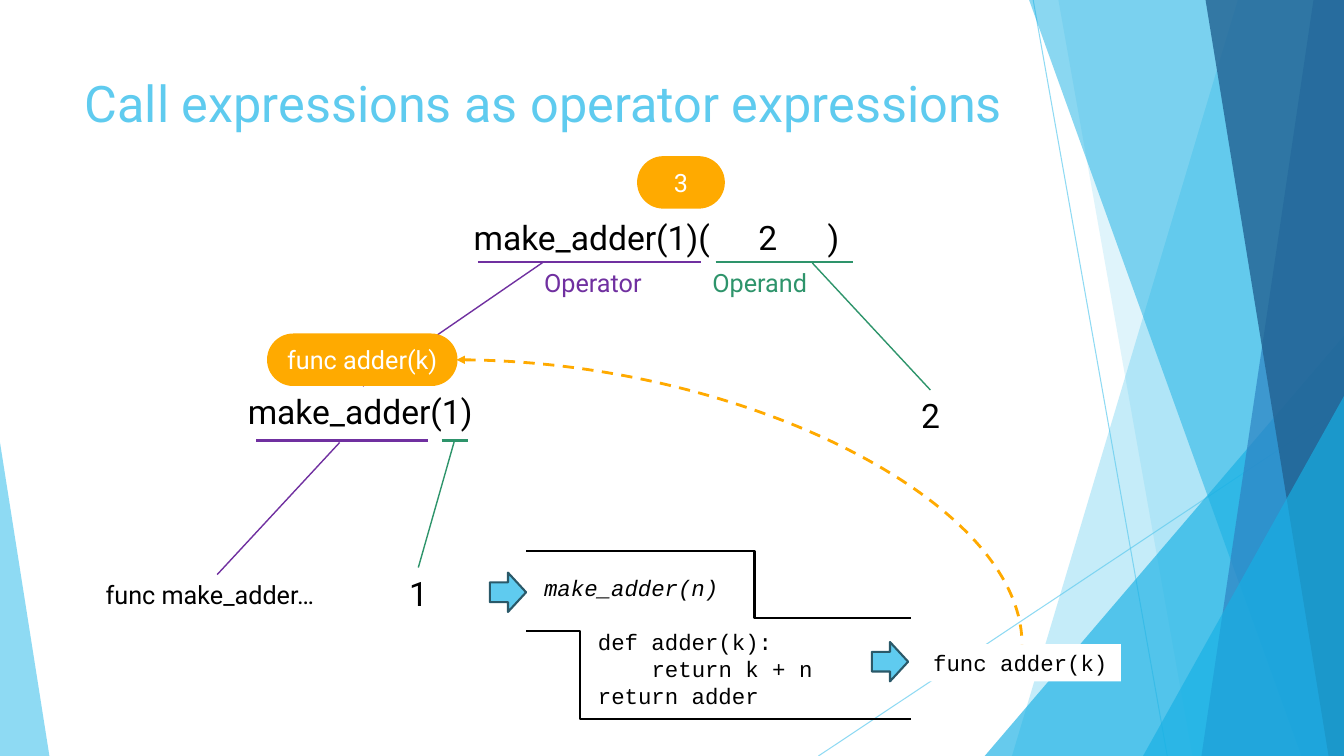
from dataclasses import dataclass

from lxml.etree import SubElement
from pptx import Presentation
from pptx.dml.color import RGBColor
from pptx.enum.dml import MSO_LINE
from pptx.enum.shapes import MSO_CONNECTOR, MSO_SHAPE
from pptx.enum.text import MSO_ANCHOR, PP_ALIGN
from pptx.oxml.ns import qn
from pptx.util import Pt

WIDTH, HEIGHT = 960, 540
SKY, AZURE, BLUE, NAVY = "5FCBEF", "17B0E4", "2E83C3", "226292"
PURPLE, GREEN, ORANGE = "7030A0", "2E946B", "FFAA00"
BLACK, WHITE, ARROW_EDGE = "000000", "FFFFFF", "2A5969"
SANS, MONO = "Roboto", "Courier New"
TOP, RIGHT = 0, 3
CHARACTER = 9.6


@dataclass
class Facet:
    """A band reaching the right slide edge, with a slanted left side."""
    top: float
    bottom: float
    color: str
    opacity: int


@dataclass
class Corner:
    """A right triangle standing on the bottom slide edge."""
    left: float
    top: float
    width: float
    apex: float
    color: str
    opacity: int


@dataclass
class Label:
    text: str
    left: float
    top: float
    width: float
    height: float
    size: float = 24
    color: str = BLACK
    font: str = SANS


@dataclass
class Underline:
    left: float
    right: float
    top: float
    color: str


@dataclass
class Branch:
    left: float
    top: float
    target: str
    color: str


@dataclass
class Step:
    """A frame line around the function body, bending at a share of its width."""
    top: float
    bottom: float
    bend: float


BACKDROP = [
    Facet(884.2, 722.9, SKY, 36),
    Facet(756, 851.8, SKY, 20),
    Corner(703.4, 239.8, 256.6, 1, AZURE, 66),
    Facet(735.1, 929.5, AZURE, 50),
    Facet(938.2, 858.2, BLUE, 70),
    Facet(861.1, 949, NAVY, 80),
    Corner(816.5, 283, 143.5, 1, AZURE, 66),
    Corner(0, 316.1, 35.3, 0, SKY, 70),
]
LABELS = {
    "expression": Label("make_adder(1)(\t2\t)", 331.2, 151.2, 297.4, 36),
    "operator": Label("Operator", 381.6, 187.2, 87.8, 28.8, 18, PURPLE),
    "operand": Label("Operand", 501.8, 187.2, 83.5, 28.8, 18, GREEN),
    "inner call": Label("make_adder(1)", 169.9, 275.8, 178.6, 36),
    "function": Label("func make_adder…", 68.4, 410.4, 173.5, 28.8, 18),
    "body": Label("make_adder(n)\ndef adder(k):\nreturn k + n\nreturn adder",
                  381.6, 406.8, 208.8, 106.6, 16, BLACK, MONO),
    "result": Label("func adder(k)", 659.5, 460.1, 141.1, 26.6, 16, BLACK, MONO),
    "two": Label("2", 650.9, 278.6, 27.4, 36),
    "one": Label("1", 285.1, 405.4, 27.4, 36),
}
EXPRESSION_TABS = [203.5, 253]
BODY_INDENTS = [0, 4, 8, 4]
UNDERLINES = [
    Underline(341.3, 500.4, 187.2, PURPLE),
    Underline(511.2, 609.1, 187.2, GREEN),
    Underline(182.9, 306, 314.6, PURPLE),
    Underline(315.4, 334.1, 314.6, GREEN),
]
BRANCHES = [
    Branch(388.1, 187.2, "inner call", PURPLE),
    Branch(580.3, 187.9, "two", GREEN),
    Branch(242.6, 316.1, "function", PURPLE),
    Branch(324.7, 314.6, "one", GREEN),
]
STEPS = [Step(393.8, 441.4, 0.593), Step(450.7, 513.4, 0.14)]
ARROWS = [(349.9, 409), (622.8, 458.6)]


def rgb(color: str) -> RGBColor:
    return RGBColor.from_string(color)


def fill_shape(shape, color: str, edge: str = "", edge_width: float = 1.5) -> None:
    shape.shadow.inherit = False
    shape.fill.solid()
    shape.fill.fore_color.rgb = rgb(color)
    if edge:
        shape.line.color.rgb = rgb(edge)
        shape.line.width = Pt(edge_width)
    else:
        shape.line.fill.background()


def set_opacity(shape, percent: int) -> None:
    color = shape._element.spPr.find(".//" + qn("a:srgbClr"))
    SubElement(color, qn("a:alpha"), val=str(percent * 1000))


def format_text(shape, size: float, color: str, font: str) -> None:
    for paragraph in shape.text_frame.paragraphs:
        for run in paragraph.runs:
            run.font.size = Pt(size)
            run.font.name = font
            run.font.color.rgb = rgb(color)


def add_line(slide, start: tuple, end: tuple, color: str, width: float,
             kind=MSO_CONNECTOR.STRAIGHT):
    connector = slide.shapes.add_connector(kind, *map(Pt, start + end))
    connector.line.color.rgb = rgb(color)
    connector.line.width = Pt(width)
    SubElement(connector._element.spPr, qn("a:effectLst"))
    return connector


def add_backdrop(slide) -> None:
    for start, end in [((738, 0), (833.8, HEIGHT)), ((WIDTH, 290.2), (584.6, HEIGHT))]:
        set_opacity(add_line(slide, start, end, SKY, 0.75), 70)
    for part in BACKDROP:
        if isinstance(part, Facet):
            builder = slide.shapes.build_freeform(Pt(part.top), 0)
            corners = [(WIDTH, 0), (WIDTH, HEIGHT), (part.bottom, HEIGHT)]
            builder.add_line_segments([(Pt(x), Pt(y)) for x, y in corners])
            shape = builder.convert_to_shape()
        else:
            shape = slide.shapes.add_shape(
                MSO_SHAPE.ISOSCELES_TRIANGLE, Pt(part.left), Pt(part.top),
                Pt(part.width), Pt(HEIGHT - part.top))
            shape.adjustments[0] = part.apex
        fill_shape(shape, part.color)
        set_opacity(shape, part.opacity)


def add_label(slide, label: Label):
    box = slide.shapes.add_textbox(
        Pt(label.left), Pt(label.top), Pt(label.width), Pt(label.height))
    box.text_frame.word_wrap = True
    box.text_frame.text = label.text
    format_text(box, label.size, label.color, label.font)
    return box


def add_pill(slide, text: str, left: float, top: float, width: float):
    pill = slide.shapes.add_shape(
        MSO_SHAPE.ROUNDED_RECTANGLE, Pt(left), Pt(top), Pt(width), Pt(36))
    pill.adjustments[0] = 0.5
    fill_shape(pill, ORANGE, ORANGE)
    pill.text_frame.text = text
    pill.text_frame.vertical_anchor = MSO_ANCHOR.MIDDLE
    pill.text_frame.paragraphs[0].alignment = PP_ALIGN.CENTER
    format_text(pill, 18, WHITE, SANS)
    return pill


def add_return_curve(slide, pill, result) -> None:
    """Draw the dashed curve that leads from the result back to the pill."""
    curve = add_line(slide, (326.1, 257), (730.1, 460.1), ORANGE, 2, MSO_CONNECTOR.CURVE)
    curve.begin_connect(pill, RIGHT)
    curve.end_connect(result, TOP)
    curve.line.dash_style = MSO_LINE.DASH
    curve._element.spPr.find(qn("a:prstGeom")).set("prst", "curvedConnector2")
    SubElement(curve._element.spPr.find(qn("a:ln")), qn("a:headEnd"), type="triangle")


def main() -> None:
    presentation = Presentation()
    presentation.slide_width, presentation.slide_height = Pt(WIDTH), Pt(HEIGHT)
    slide = presentation.slides.add_slide(presentation.slide_layouts[5])
    add_backdrop(slide)

    title = slide.shapes.title
    title.left, title.top, title.width, title.height = map(Pt, (53.3, 48.2, 676.8, 103.7))
    title.text_frame.text = "Call expressions as operator expressions"
    title.text_frame.vertical_anchor = MSO_ANCHOR.TOP
    title.text_frame.paragraphs[0].alignment = PP_ALIGN.LEFT
    format_text(title, 36, SKY, SANS)

    boxes = {name: add_label(slide, label) for name, label in LABELS.items()}
    fill_shape(boxes["result"], WHITE)
    expression = boxes["expression"].text_frame.paragraphs[0]
    tabs = SubElement(expression._p.get_or_add_pPr(), qn("a:tabLst"))
    for position in EXPRESSION_TABS:
        SubElement(tabs, qn("a:tab"), pos=str(Pt(position)), algn="l")
    body = boxes["body"].text_frame.paragraphs
    for paragraph, indent in zip(body, BODY_INDENTS):
        paragraph._p.get_or_add_pPr().set("marL", str(Pt(indent * CHARACTER)))
    body[0].runs[0].font.italic = True
    body[1].space_before = Pt(19)

    for rule in UNDERLINES:
        add_line(slide, (rule.left, rule.top), (rule.right, rule.top), rule.color, 2)
    for branch in BRANCHES:
        start = (branch.left, branch.top)
        add_line(slide, start, start, branch.color, 1).end_connect(boxes[branch.target], TOP)
    for left, top in ARROWS:
        arrow = slide.shapes.add_shape(
            MSO_SHAPE.RIGHT_ARROW, Pt(left), Pt(top), Pt(25.9), Pt(28.1))
        fill_shape(arrow, SKY, ARROW_EDGE)
    for step in STEPS:
        frame = add_line(slide, (375.8, step.top), (650.9, step.bottom), BLACK, 1.5,
                         MSO_CONNECTOR.ELBOW)
        guides = frame._element.spPr.find(".//" + qn("a:avLst"))
        SubElement(guides, qn("a:gd"), name="adj1", fmla=f"val {round(step.bend * 100000)}")

    pill = add_pill(slide, "func adder(k)", 191.5, 239, 134.6)
    add_return_curve(slide, pill, boxes["result"])
    add_pill(slide, "3", 455.8, 112.3, 61.2)
    presentation.save("out.pptx")


if __name__ == "__main__":
    main()
